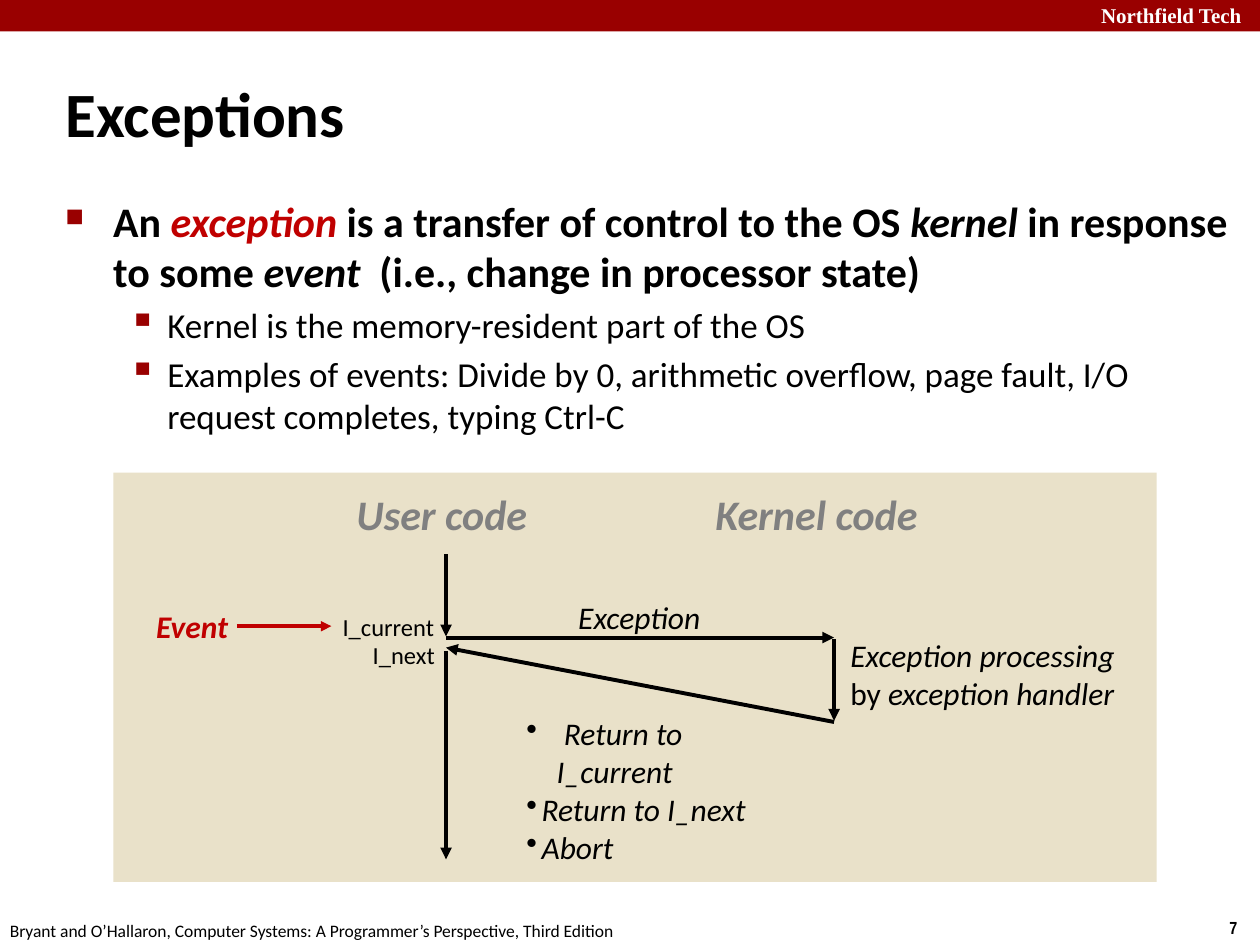
from typing import NamedTuple

from lxml import etree
from pptx import Presentation
from pptx import util as u
from pptx.dml.color import RGBColor
from pptx.enum import shapes, text
from pptx.oxml.ns import qn

# Grid of the slide: 100 columns by 75 rows
COLS, ROWS = 100, 75
WIDTH, HEIGHT = u.Inches(10), u.Inches(7.5)
BLACK, WHITE, GREY = "000000", "FFFFFF", "808080"
CRIMSON, RED, SAND = "990000", "C00000", "E9E1C9"


class Run(NamedTuple):
    words: str
    fmt: dict = {}


class Para(NamedTuple):
    runs: list
    bullet: str = ""
    indent: float = 0  # columns
    bullet_pct: int = 100
    bullet_color: str = BLACK
    before: float = 0  # points


class Label(NamedTuple):
    col: float
    row: float
    cols: float
    rows: float
    paras: list
    fmt: dict
    wrap: bool = False


class Arrow(NamedTuple):
    start: tuple
    end: tuple
    color: str = BLACK
    width: float = 2.25


def x(col: float) -> int:
    return round(WIDTH * col / COLS)


def y(row: float) -> int:
    return round(HEIGHT * row / ROWS)


def rgb(value: str) -> RGBColor:
    return RGBColor.from_string(value)


def font(size: float, color: str = BLACK, name: str = "Calibri", **more) -> dict:
    return {"size": u.Pt(size), "name": name, "color": color, **more}


def format_run(r, fmt: dict) -> None:
    for key, value in fmt.items():
        if key == "color":
            r.font.color.rgb = rgb(value)
        else:
            setattr(r.font, key, value)


def add_bullet(p, para: Para) -> None:
    pPr = p._p.get_or_add_pPr()
    pPr.set("marL", str(x(para.indent)))
    pPr.set("indent", str(-x(para.indent if para.before == 0 else min(para.indent, para.hang))
                          if hasattr(para, "hang") else -x(para.indent)))


def set_bullet(p, para: Para, hang: float) -> None:
    pPr = p._p.get_or_add_pPr()
    pPr.set("marL", str(x(para.indent)))
    pPr.set("indent", str(-x(hang)))
    color = etree.SubElement(pPr, qn("a:buClr"))
    etree.SubElement(color, qn("a:srgbClr"), val=para.bullet_color)
    etree.SubElement(pPr, qn("a:buSzPct"), val=str(para.bullet_pct * 1000))
    etree.SubElement(pPr, qn("a:buChar"), char=para.bullet)


def fill_text(tf, paras: list, fmt: dict) -> None:
    for i, para in enumerate(paras):
        p = tf.add_paragraph() if i else tf.paragraphs[0]
        p.alignment = text.PP_ALIGN.LEFT
        p.space_before = u.Pt(para.before)
        if para.bullet:
            set_bullet(p, para, HANGS.get(para.indent, para.indent))
        for run in para.runs:
            r = p.add_run()
            r.text = run.words
            format_run(r, {**fmt, **run.fmt})


def add_label(s, label: Label) -> None:
    sp = s.shapes.add_textbox(x(label.col), y(label.row), x(label.cols), y(label.rows))
    tf = sp.text_frame
    tf.word_wrap = label.wrap
    tf.auto_size = text.MSO_AUTO_SIZE.NONE if label.wrap else text.MSO_AUTO_SIZE.SHAPE_TO_FIT_TEXT
    fill_text(tf, label.paras, label.fmt)


def add_block(s, col: float, row: float, cols: float, rows: float, color: str) -> None:
    sp = s.shapes.add_shape(shapes.MSO_SHAPE.RECTANGLE, x(col), y(row), x(cols), y(rows))
    sp.shadow.inherit = False
    sp.fill.solid()
    sp.fill.fore_color.rgb = rgb(color)
    sp.line.fill.background()


def add_arrow(s, arrow: Arrow) -> None:
    (c1, r1), (c2, r2) = arrow.start, arrow.end
    sp = s.shapes.add_connector(shapes.MSO_CONNECTOR.STRAIGHT, x(c1), y(r1), x(c2), y(r2))
    sp.line.color.rgb = rgb(arrow.color)
    sp.line.width = u.Pt(arrow.width)
    etree.SubElement(sp.line._get_or_add_ln(), qn("a:tailEnd"), type="triangle")
    etree.SubElement(sp._element.spPr, qn("a:effectLst"))


def plain(words: str) -> list:
    return [Para([Run(words)])]


# Second-level bullets hang less than their full indent
HANGS = {8.1: 3.1}
ITALIC = {"italic": True}
SUB = {"size": u.Pt(20), "bold": False}

BODY = [
    Para([Run("An "), Run("exception", {"italic": True, "color": RED}),
          Run(" is a transfer of control to the OS "), Run("kernel", ITALIC),
          Run(" in response to some "), Run("event", ITALIC),
          Run("  (i.e., change in processor state)")],
         "■", 3.8, 60, CRIMSON, 4.8),
    *(Para([Run(words, SUB)], "▪", 8.1, 110, CRIMSON, 4) for words in (
        "Kernel is the memory-resident part of the OS",
        "Examples of events: Divide by 0, arithmetic overflow, page fault, "
        "I/O request completes, typing Ctrl-C")),
]
OUTCOMES = [Para([Run(words)], "•", indent) for words, indent in (
    (" Return to I_current", 2.4), ("Return to I_next", 1.2), ("Abort", 1.2))]
HANDLER = [Para([Run("Exception processing")]),
           Para([Run("by ", {"italic": False}), Run("exception handler")])]

HEADING = font(24, GREY, bold=True, italic=True)
NOTE = font(18, italic=True)
CODE = font(14)

FRAME_LABELS = [
    Label(86.4, -0.3, 14.3, 3, plain("Northfield Tech"),
          font(12, WHITE, "Times New Roman", bold=True)),
    Label(96.6, 72.3, 3.4, 2.7, plain("7"), font(10, name="Arial Narrow", bold=True)),
    Label(-0.2, 72.5, 50.8, 2.7,
          plain("Bryant and O’Hallaron, Computer Systems: A Programmer’s Perspective, Third Edition"),
          font(10)),
    Label(4.2, 15, 95, 20.8, BODY, font(24, bold=True), True),
]
DIAGRAM_LABELS = [
    Label(27.3, 38.3, 16.9, 5, plain("User code"), HEADING),
    Label(55.8, 38.3, 19.5, 5, plain("Kernel code"), HEADING),
    Label(44.9, 47, 12.5, 4, plain("Exception"), NOTE),
    Label(66.5, 50, 23.5, 10.1, HANDLER, NOTE, True),
    Label(40.8, 56.2, 22.9, 10.1, OUTCOMES, NOTE, True),
    Label(11.4, 47.7, 8.8, 4, plain("Event"), font(18, RED, bold=True, italic=True), True),
    Label(26.2, 48.1, 9.5, 3.4, plain("I_current"), CODE),
    Label(28.6, 50.3, 7.1, 3.4, plain("I_next"), CODE),
]

USER, KERNEL = 35.4, 66.2  # columns of the two control flows
ARROWS = [
    Arrow((USER, 44), (USER, 50.5)),
    Arrow((USER, 50.6), (KERNEL, 50.6)),
    Arrow((KERNEL, 50.7), (KERNEL, 57.2)),
    Arrow((KERNEL, 57.3), (USER, 51.4)),
    Arrow((USER, 51.7), (USER, 68.2)),
    Arrow((18.8, 49.7), (26.3, 49.7), RED, 2),
]


def main() -> None:
    prs = Presentation()
    prs.slide_width, prs.slide_height = WIDTH, HEIGHT
    s = prs.slides.add_slide(prs.slide_layouts[5])

    # Title
    title = s.shapes.title
    place = {"left": x(4.2), "top": y(5.8), "width": x(36.7), "height": y(6.3)}
    for key, value in place.items():
        setattr(title, key, value)
    title.text_frame.vertical_anchor = text.MSO_ANCHOR.MIDDLE
    title.text_frame.auto_size = text.MSO_AUTO_SIZE.NONE
    fill_text(title.text_frame, plain("Exceptions"), font(36, bold=True))

    # Top bar, footer and body text
    add_block(s, 0, 0, COLS, 2.5, CRIMSON)
    for label in FRAME_LABELS:
        add_label(s, label)

    # Control flow diagram
    add_block(s, 9, 37.5, 82.8, 32.5, SAND)
    for arrow in ARROWS:
        add_arrow(s, arrow)
    for label in DIAGRAM_LABELS:
        add_label(s, label)

    prs.save("out.pptx")


if __name__ == "__main__":
    main()
